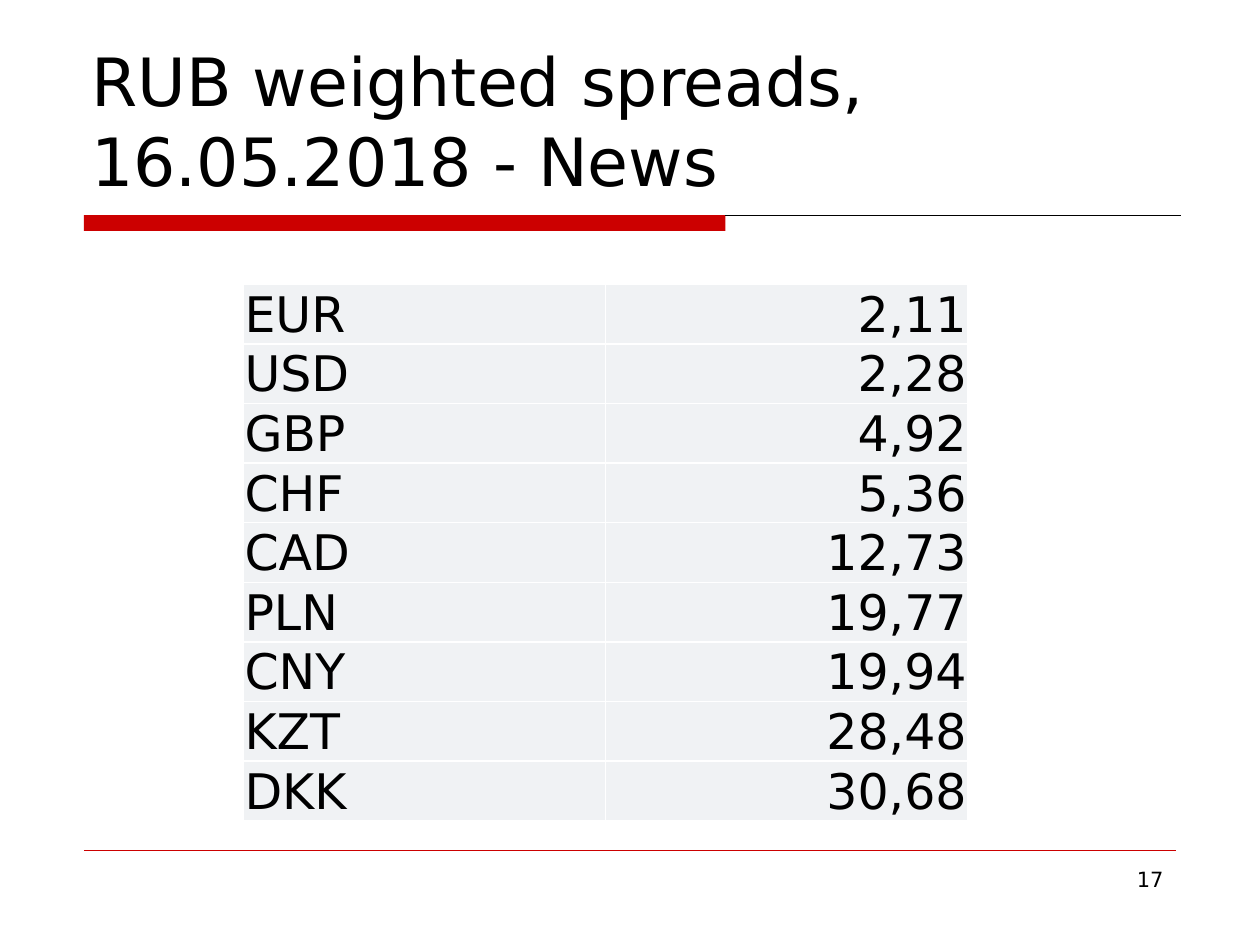
import dataclasses

import pptx
import pptx.dml.color
import pptx.enum.shapes
import pptx.enum.text
import pptx.oxml
import pptx.oxml.ns
import pptx.util
from lxml import etree

Pt = pptx.util.Pt
Align = pptx.enum.text.PP_ALIGN
Anchor = pptx.enum.text.MSO_ANCHOR


@dataclasses.dataclass(frozen=True)
class Theme:
    font: str = "DejaVu Sans"
    text: str = "000000"
    accent: str = "CC0000"
    cell: str = "F0F2F4"
    border: str = "FFFFFF"
    title_size: int = 38
    table_size: int = 28
    number_size: int = 12


THEME = Theme()

SPREADS = [
    ("EUR", "2,11"),
    ("USD", "2,28"),
    ("GBP", "4,92"),
    ("CHF", "5,36"),
    ("CAD", "12,73"),
    ("PLN", "19,77"),
    ("CNY", "19,94"),
    ("KZT", "28,48"),
    ("DKK", "30,68"),
]


def color(value):
    return pptx.dml.color.RGBColor.from_string(value)


def write_text(frame, text, *, size, align=Align.LEFT):
    paragraph = frame.paragraphs[0]
    paragraph.alignment = align
    run = paragraph.add_run()
    run.text = text
    run.font.name = THEME.font
    run.font.size = Pt(size)
    run.font.color.rgb = color(THEME.text)


def add_text(slide, text, left, top, width, height, *, anchor=Anchor.TOP, **text_format):
    shape = slide.shapes.add_textbox(Pt(left), Pt(top), Pt(width), Pt(height))
    shape.text_frame.word_wrap = True
    shape.text_frame.vertical_anchor = anchor
    write_text(shape.text_frame, text, **text_format)


def add_bar(slide, left, top, width, height):
    shape = slide.shapes.add_shape(
        pptx.enum.shapes.MSO_SHAPE.RECTANGLE, Pt(left), Pt(top), Pt(width), Pt(height)
    )
    shape.shadow.inherit = False
    shape.fill.solid()
    shape.fill.fore_color.rgb = color(THEME.accent)
    shape.line.fill.background()


def add_rule(slide, left, right, top, line_color, weight):
    connector = slide.shapes.add_connector(
        pptx.enum.shapes.MSO_CONNECTOR.STRAIGHT, Pt(left), Pt(top), Pt(right), Pt(top)
    )
    connector.line.color.rgb = color(line_color)
    connector.line.width = Pt(weight)
    etree.SubElement(connector._element.spPr, pptx.oxml.ns.qn("a:effectLst"))


def set_borders(cell, line_color, weight):
    properties = cell._tc.get_or_add_tcPr()
    for index, side in enumerate(("lnL", "lnR", "lnT", "lnB")):
        border = pptx.oxml.parse_xml(
            f'<a:{side} {pptx.oxml.ns.nsdecls("a")} w="{Pt(weight)}">'
            f'<a:solidFill><a:srgbClr val="{line_color}"/></a:solidFill></a:{side}>'
        )
        properties.insert(index, border)


def fill_cell(cell, text, align):
    cell.margin_left = cell.margin_right = Pt(0.72)
    cell.margin_top = Pt(0.4)
    cell.margin_bottom = 0
    cell.vertical_anchor = Anchor.BOTTOM
    cell.fill.solid()
    cell.fill.fore_color.rgb = color(THEME.cell)
    set_borders(cell, THEME.border, 1)
    write_text(cell.text_frame, text, size=THEME.table_size, align=align)


def add_spread_table(slide, left, top, column_width, row_height):
    alignments = (Align.LEFT, Align.RIGHT)
    table = slide.shapes.add_table(
        len(SPREADS), len(alignments), Pt(left), Pt(top),
        Pt(column_width * len(alignments)), Pt(row_height * len(SPREADS)),
    ).table
    table.first_row = False
    table.horz_banding = False
    for column in table.columns:
        column.width = Pt(column_width)
    for row_index, values in enumerate(SPREADS):
        table.rows[row_index].height = Pt(row_height)
        for column_index, (value, align) in enumerate(zip(values, alignments)):
            fill_cell(table.cell(row_index, column_index), value, align)


def main():
    presentation = pptx.Presentation()
    presentation.slide_width = Pt(720)
    presentation.slide_height = Pt(540)
    slide = presentation.slides.add_slide(presentation.slide_layouts[6])

    add_bar(slide, 48, 123, 366.5, 9)
    add_rule(slide, 414.5, 675, 123, THEME.text, 0.75)
    add_rule(slide, 48, 672, 486, THEME.accent, 0.25)
    add_text(slide, "RUB weighted spreads, 16.05.2018 - News",
             45, 21.5, 630, 96, anchor=Anchor.BOTTOM, size=THEME.title_size)
    add_text(slide, "17", 516, 491.5, 156, 37.5,
             size=THEME.number_size, align=Align.RIGHT)
    add_spread_table(slide, 139, 162.5, 207, 34.05)

    presentation.save("out.pptx")


if __name__ == "__main__":
    main()
